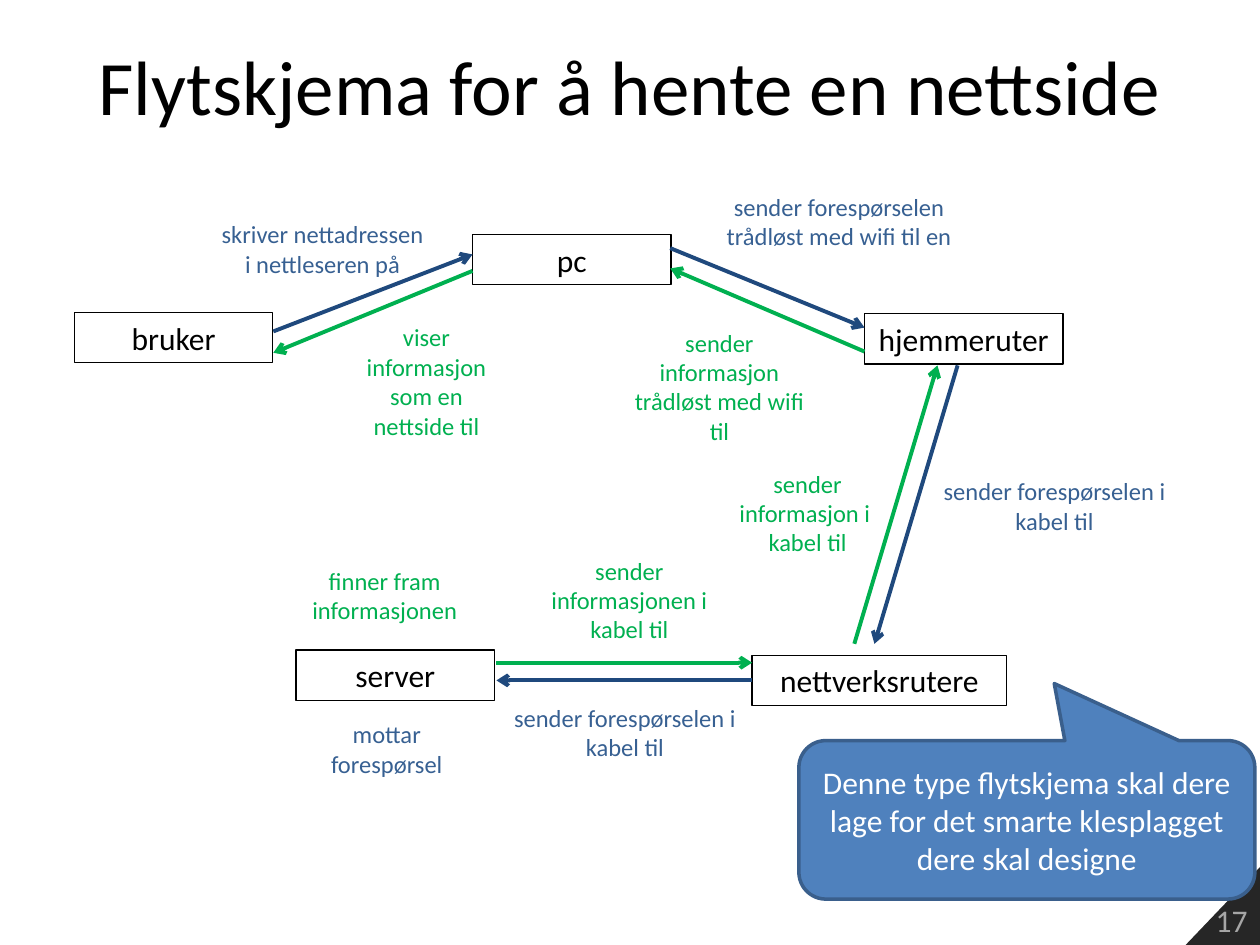
from dataclasses import dataclass

from pptx import Presentation
from pptx.dml.color import RGBColor as RGB
from pptx.enum.shapes import MSO_CONNECTOR as LINE, MSO_SHAPE as SHAPE
from pptx.enum.text import MSO_ANCHOR as ANCHOR, PP_ALIGN as ALIGN
from pptx.oxml.ns import qn
from pptx.util import Pt
from lxml.etree import SubElement


@dataclass(frozen=True)
class Theme:
    font: str = "Calibri"
    black: str = "000000"
    white: str = "FFFFFF"
    ask: str = "1F497D"
    asktext: str = "376092"
    reply: str = "00B050"
    call: str = "4F81BD"
    edge: str = "3A5F8C"
    corner: str = "262626"
    number: str = "A6A6A6"
    head: int = 44
    body: int = 18
    note: int = 14


@dataclass(frozen=True)
class Box:
    left: float
    top: float
    width: float
    height: float

    def inner(self, x, y, width, height):
        return Box(self.left + x, self.top + y, width, height)

    def lengths(self):
        return [Pt(v) for v in (self.left, self.top, self.width, self.height)]


T = Theme()

# name: x, y, width
NODES = {
    "bruker": (0.5, 72.5, 113.4),
    "pc": (228, 28, 113.4),
    "hjemmeruter": (452, 73.3, 113.4),
    "server": (127.2, 265.5, 113.4),
    "nettverksrutere": (387.8, 268.4, 145.4),
}
NODE_H = 28.8

# start x, y, end x, y
ASKS = [
    (114.2, 83.4, 228, 39.4),
    (341, 35.8, 452, 81.2),
    (505.2, 102.8, 457.7, 261.9),
]
REPLIES = [
    (241.7, 272.7, 387.8, 272.7),
    (446.2, 261.9, 493.7, 102.8),
    (452, 94.9, 341, 47.4),
    (228, 48.8, 114.2, 95.6),
]

# x, y, width, lines, paragraphs
ASK_NOTES = [
    (76.1, 15.7, 132.5, 2, ["skriver nettadressen i nettleseren på"]),
    (347.5, 0, 180, 2, ["sender forespørselen trådløst med wifi til en"]),
    (476.4, 162.6, 168.5, 2, ["sender forespørselen i kabel til"]),
    (230.9, 292.2, 168.5, 2, ["sender forespørselen i kabel til"]),
    (130.8, 301.5, 96.5, 2, ["mottar forespørsel"]),
]
REPLY_NOTES = [
    (114.2, 213.7, 127.4, 2, ["finner fram informasjonen"]),
    (263.3, 207.9, 108.7, 3, ["sender informasjonen i kabel til"]),
    (362.6, 158.2, 113.8, 3, ["sender informasjon i ", "kabel til"]),
    (312.2, 77.6, 113.8, 4, ["sender informasjon trådløst med wifi til"]),
    (153.1, 74.7, 97.2, 4, ["viser informasjon som en nettside til"]),
]


def write(shape, paras, size, color, align=ALIGN.CENTER, anchor=ANCHOR.MIDDLE, wrap=True):
    frame = shape.text_frame
    frame.word_wrap = wrap
    frame.vertical_anchor = anchor
    for i, text in enumerate(paras):
        para = frame.add_paragraph() if i else frame.paragraphs[0]
        para.alignment = align
        run = para.add_run()
        run.text = text
        run.font.name = T.font
        run.font.size = Pt(size)
        run.font.color.rgb = RGB.from_string(color)


def paint(shape, fill=None, line=None, weight=0.75):
    shape.shadow.inherit = False
    for part, color in ((shape.fill, fill), (shape.line.fill, line)):
        if color:
            part.solid()
            part.fore_color.rgb = RGB.from_string(color)
        else:
            part.background()
    if line:
        shape.line.width = Pt(weight)


def arrow(slide, box, ends, color):
    x1, y1, x2, y2 = ends
    link = slide.shapes.add_connector(
        LINE.STRAIGHT, Pt(box.left + x1), Pt(box.top + y1),
        Pt(box.left + x2), Pt(box.top + y2))
    link.line.color.rgb = RGB.from_string(color)
    link.line.width = Pt(2.25)
    SubElement(link.line._get_or_add_ln(), qn("a:tailEnd"), type="arrow")
    SubElement(link._element.spPr, qn("a:effectLst"))
    return link


def title(slide, box):
    shape = slide.shapes.title
    shape.left, shape.top, shape.width, shape.height = box.lengths()
    write(shape, ["Flytskjema for å hente en nettside"], T.head, T.black)


def diagram(slide, box):
    nodes = {}
    for name, (x, y, width) in NODES.items():
        node = slide.shapes.add_shape(
            SHAPE.RECTANGLE, *box.inner(x, y, width, NODE_H).lengths())
        paint(node, line=T.black)
        write(node, [name], T.body, T.black, wrap=False)
        nodes[name] = node

    for color, links in ((T.ask, ASKS), (T.reply, REPLIES)):
        for ends in links:
            arrow(slide, box, ends, color)
    last = arrow(slide, box, (387.8, 282.8, 241.7, 282.8), T.ask)
    last.begin_connect(nodes["nettverksrutere"], 1)

    for color, notes in ((T.asktext, ASK_NOTES), (T.reply, REPLY_NOTES)):
        for x, y, width, lines, paras in notes:
            area = box.inner(x, y, width, 7.2 + 17 * lines)
            note = slide.shapes.add_textbox(*area.lengths())
            write(note, paras, T.note, color, anchor=ANCHOR.TOP)


def corner(slide, box):
    """Dark page corner with the slide number."""
    right, base = box.left + box.width, box.top + box.height
    path = slide.shapes.build_freeform(Pt(box.left), Pt(base))
    path.add_line_segments([(Pt(right), Pt(box.top)), (Pt(right), Pt(base))])
    shape = path.convert_to_shape()
    paint(shape, fill=T.corner)
    write(shape, ["17"], T.body, T.number, ALIGN.RIGHT, ANCHOR.BOTTOM)


def callout(slide, box):
    shape = slide.shapes.add_shape(SHAPE.ROUNDED_RECTANGULAR_CALLOUT, *box.lengths())
    for i, value in enumerate((0.06, -0.86, 0.17)):
        shape.adjustments[i] = value
    paint(shape, T.call, T.edge, 2)
    write(shape, ["Denne type flytskjema skal dere lage for det smarte "
                  "klesplagget dere skal designe"], T.body, T.white)


def main():
    deck = Presentation()
    deck.slide_width, deck.slide_height = Pt(720), Pt(540)
    slide = deck.slides.add_slide(deck.slide_layouts[5])
    corner(slide, Box(677.5, 495.5, 42.5, 44.5))
    title(slide, Box(36, 3.6, 648, 90))
    diagram(slide, Box(42, 106, 645, 342))
    callout(slide, Box(456.5, 423.2, 260.6, 90.6))
    deck.save("out.pptx")


if __name__ == "__main__":
    main()
